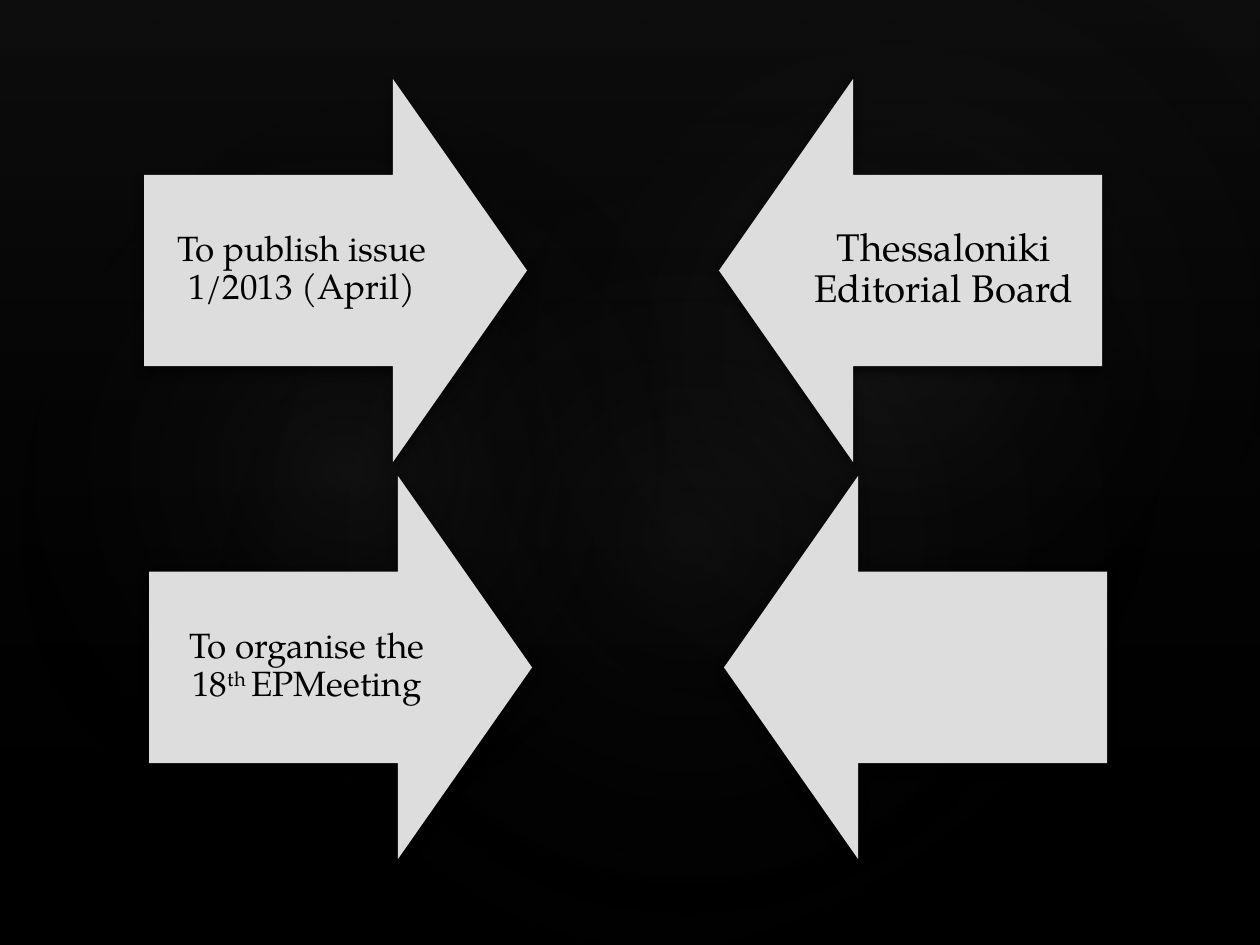
from pptx import Presentation, util as u
from pptx.dml.color import RGBColor
from pptx.enum import shapes, text
from pptx.oxml import parse_xml
from pptx.oxml.ns import nsdecls

PX = 914400 // 126
W, H = 1260, 945
FONT = "TeX Gyre Pagella"
BLACK = RGBColor(0x00, 0x00, 0x00)
SHEEN = RGBColor(0x26, 0x26, 0x26)
GLOW = RGBColor(0x94, 0x94, 0x94)
ARROW = RGBColor(0xDD, 0xDD, 0xDD)

SIDE = 383      # each arrow fills a square
LABEL_W = 316
RIGHT = shapes.MSO_SHAPE.RIGHT_ARROW
LEFT = shapes.MSO_SHAPE.LEFT_ARROW


def add_shape(slide, kind, x, y, w, h):
    s = slide.shapes.add_shape(kind, x * PX, y * PX, w * PX, h * PX)
    s.shadow.inherit = False
    s.line.fill.background()
    return s


def set_gradient(s, stops, direction):
    """Fill with (position %, colour, opacity %) stops."""
    s.fill.background()
    gs = "".join(
        f'<a:gs pos="{pos * 1000}"><a:srgbClr val="{color}">'
        f'<a:alpha val="{opacity * 1000}"/></a:srgbClr></a:gs>'
        for pos, color, opacity in stops)
    grad = parse_xml(f'<a:gradFill {nsdecls("a")} rotWithShape="1">'
                     f'<a:gsLst>{gs}</a:gsLst>{direction}</a:gradFill>')
    spPr = s._element.spPr
    spPr.replace(spPr.find("{*}noFill"), grad)


def add_backdrop(slide):
    slide.background.fill.solid()
    slide.background.fill.fore_color.rgb = BLACK
    sheen = add_shape(slide, shapes.MSO_SHAPE.RECTANGLE, 0, 0, W, H)
    set_gradient(sheen, [(0, SHEEN, 36), (100, BLACK, 10)],
                 '<a:lin ang="5400000" scaled="0"/>')
    for x, y, w, h, angle, opacity in [(189, 144, 998, 786, 328.7, 7),
                                       (-38, 161, 764, 617, 294.3, 8),
                                       (451, 16, 893, 655, 328.7, 8)]:
        glow = add_shape(slide, shapes.MSO_SHAPE.OVAL, x, y, w, h)
        glow.rotation = angle
        set_gradient(glow, [(0, GLOW, opacity), (58, BLACK, 0)],
                     '<a:path path="circle"><a:fillToRect l="50000" t="50000" '
                     'r="50000" b="50000"/></a:path>')


def add_label(slide, x, y, w, h, size, parts):
    """Centred label; parts are (words, is superscript)."""
    tf = slide.shapes.add_textbox(x * PX, y * PX, w * PX, h * PX).text_frame
    tf.word_wrap = True
    tf.vertical_anchor = text.MSO_ANCHOR.MIDDLE
    tf.margin_left = tf.margin_right = 20 * PX
    tf.margin_top = tf.margin_bottom = 20 * PX
    p = tf.paragraphs[0]
    p.alignment = text.PP_ALIGN.CENTER
    p.line_spacing = 0.9
    for words, is_super in parts:
        r = p.add_run()
        r.text = words
        r.font.name = FONT
        r.font.size = u.Pt(size)
        r.font.color.rgb = BLACK
        if is_super:
            r.font._element.set("baseline", "30000")


def add_arrow(slide, kind, x, y, size, parts):
    s = add_shape(slide, kind, x, y, SIDE, SIDE)
    s.adjustments[0], s.adjustments[1] = 0.5, 0.35
    s.fill.solid()
    s.fill.fore_color.rgb = ARROW
    s._element.spPr.find("{*}effectLst").append(parse_xml(
        f'<a:outerShdw {nsdecls("a")} blurRad="{u.Pt(6)}" dist="{u.Pt(3)}" '
        f'dir="5400000" rotWithShape="0"><a:srgbClr val="{BLACK}">'
        '<a:alpha val="60000"/></a:srgbClr></a:outerShdw>'))
    if parts:
        label_x = x if kind == RIGHT else x + SIDE - LABEL_W
        add_label(slide, label_x, y + SIDE // 4, LABEL_W, SIDE // 2, size, parts)


def main():
    prs = Presentation()
    prs.slide_width, prs.slide_height = u.Inches(10), u.Inches(7.5)
    slide = prs.slides.add_slide(prs.slide_layouts[6])
    add_backdrop(slide)
    for kind, x, y, size, parts in [
        (RIGHT, 144, 79, 20, [("To publish issue 1/2013 (April)", False)]),
        (LEFT, 719, 79, 22, [("Thessaloniki Editorial Board", False)]),
        (RIGHT, 149, 476, 20, [("To organise the 18", False), ("th ", True),
                               ("EPMeeting", False)]),
        (LEFT, 724, 476, 20, []),
    ]:
        add_arrow(slide, kind, x, y, size, parts)
    prs.save("out.pptx")


if __name__ == "__main__":
    main()
